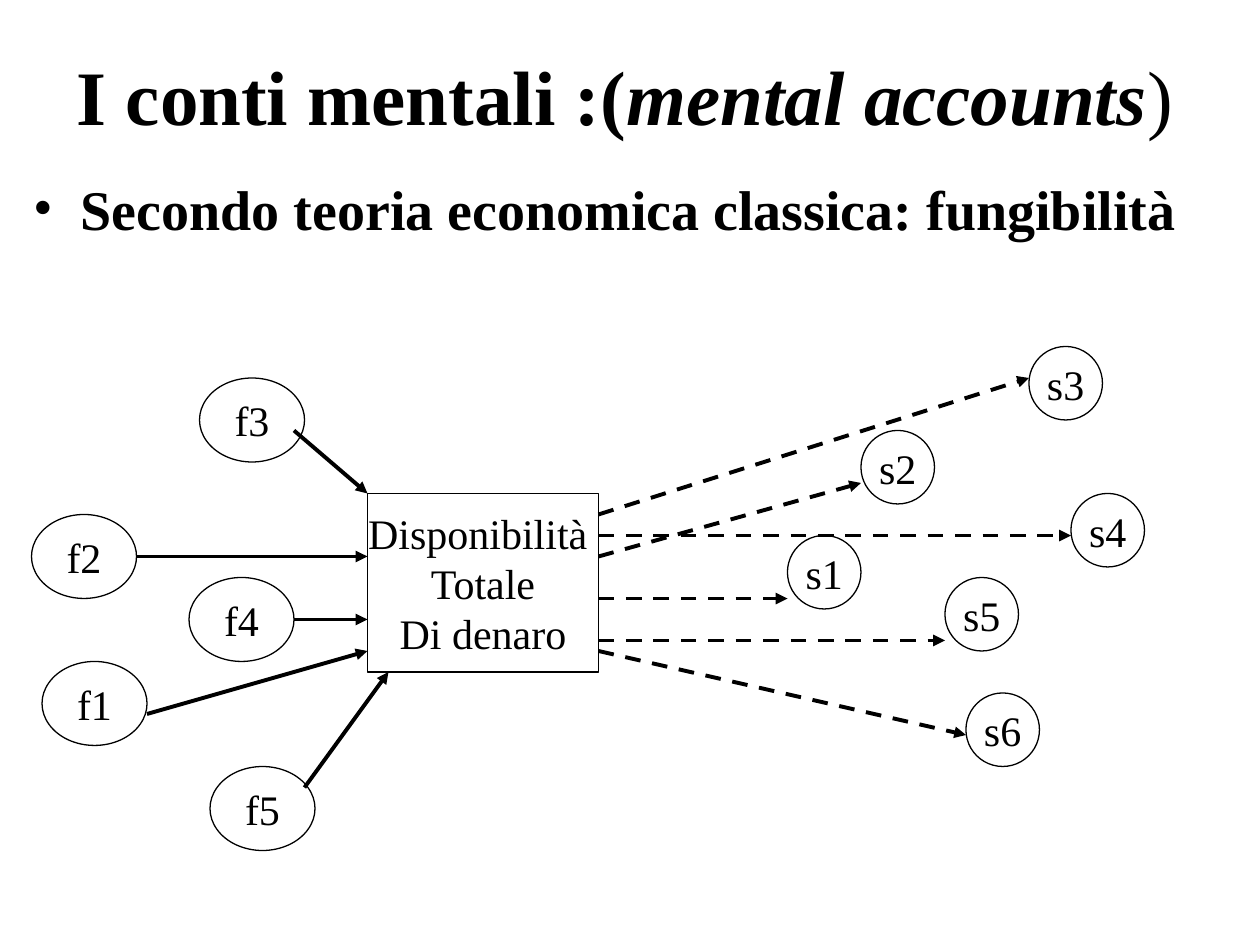
from lxml.etree import SubElement
from pptx import Presentation
from pptx.dml.color import RGBColor
from pptx.enum.dml import MSO_LINE
from pptx.enum.shapes import MSO_CONNECTOR, MSO_SHAPE
from pptx.enum.text import MSO_ANCHOR, PP_ALIGN
from pptx.oxml.ns import qn
from pptx.util import Pt

COLORS = {"ink": "000000", "paper": "FFFFFF"}
INK = RGBColor.from_string(COLORS["ink"])
PAPER = RGBColor.from_string(COLORS["paper"])


def add_run(p, text, size, bold=False, italic=False):
    r = p.add_run()
    r.text = text
    r.font.name = "Times New Roman"
    r.font.size = Pt(size)
    r.font.bold = bold
    r.font.italic = italic
    r.font.color.rgb = INK


def add_node(kind, left, top, width, height, lines):
    sp = s.shapes.add_shape(kind, Pt(left), Pt(top), Pt(width), Pt(height))
    sp.shadow.inherit = False
    sp.fill.solid()
    sp.fill.fore_color.rgb = PAPER
    sp.line.color.rgb = INK
    sp.line.width = Pt(0.75)
    tf = sp.text_frame
    tf.word_wrap = False
    tf.vertical_anchor = MSO_ANCHOR.MIDDLE
    for i, line in enumerate(lines):
        p = tf.add_paragraph() if i else tf.paragraphs[0]
        p.alignment = PP_ALIGN.CENTER
        add_run(p, line, 24)


prs = Presentation()
prs.slide_width, prs.slide_height = Pt(720), Pt(540)
s = prs.slides.add_slide(prs.slide_layouts[5])
s.background.fill.solid()
s.background.fill.fore_color.rgb = PAPER

# Title
title = s.shapes.title
title.left, title.top, title.width, title.height = Pt(24), Pt(12), Pt(666), Pt(84)
tf = title.text_frame
tf.vertical_anchor = MSO_ANCHOR.MIDDLE
p = tf.paragraphs[0]
p.alignment = PP_ALIGN.CENTER
add_run(p, "I conti mentali :(", 44, bold=True)
add_run(p, "mental accounts", 44, bold=True, italic=True)
add_run(p, ")", 44)

# Bulleted statement
body = s.shapes.add_textbox(Pt(12), Pt(96), Pt(672), Pt(426))
tf = body.text_frame
tf.word_wrap = True
p = tf.paragraphs[0]
p.space_before = Pt(6.4)
pPr = p._p.get_or_add_pPr()
pPr.set("marL", str(Pt(27)))
pPr.set("indent", str(-Pt(27)))
SubElement(pPr, qn("a:buFont"), typeface="Times New Roman")
SubElement(pPr, qn("a:buChar"), char="•")
add_run(p, "Secondo teoria economica classica: fungibilità", 32, bold=True)

# Central box
BOX_LEFT, BOX_TOP, BOX_W, BOX_H = 210, 282, 132, 102
BOX_RIGHT, BOX_BOTTOM = BOX_LEFT + BOX_W, BOX_TOP + BOX_H
add_node(MSO_SHAPE.RECTANGLE, BOX_LEFT, BOX_TOP, BOX_W, BOX_H,
         ["Disponibilità ", "Totale", "Di denaro"])

# Sources (f) and uses (s): label, left, top
sources = [("f1", 24, 378), ("f2", 18, 294), ("f3", 114, 216),
           ("f4", 108, 330), ("f5", 120, 438)]
uses = [("s2", 492, 246), ("s3", 588, 198), ("s1", 450, 306),
        ("s4", 612, 282), ("s5", 540, 330), ("s6", 552, 396)]
for nodes, width, height in ((sources, 60, 48), (uses, 42, 42)):
    for label, left, top in nodes:
        add_node(MSO_SHAPE.OVAL, left, top, width, height, [label])

# Arrows: solid into the box, dashed out of it
inflows = [(168, 246, BOX_LEFT, BOX_TOP), (78, 318, BOX_LEFT, 318),
           (84, 408, BOX_LEFT, 372), (174, 450, 222, BOX_BOTTOM),
           (168, 354, BOX_LEFT, 354)]
outflows = [(BOX_RIGHT, y1, x2, y2) for y1, x2, y2 in (
    (318, 492, 276), (342, 450, 342), (294, 588, 216),
    (366, 540, 366), (306, 612, 306), (372, 552, 420))]
for arrows, dash in ((inflows, MSO_LINE.SOLID), (outflows, MSO_LINE.DASH)):
    for ends in arrows:
        cxn = s.shapes.add_connector(MSO_CONNECTOR.STRAIGHT, *map(Pt, ends))
        cxn.line.color.rgb = INK
        cxn.line.width = Pt(2.25)
        cxn.line.dash_style = dash
        SubElement(cxn.line._get_or_add_ln(), qn("a:tailEnd"), type="triangle")
        SubElement(cxn._element.spPr, qn("a:effectLst"))

prs.save("out.pptx")
